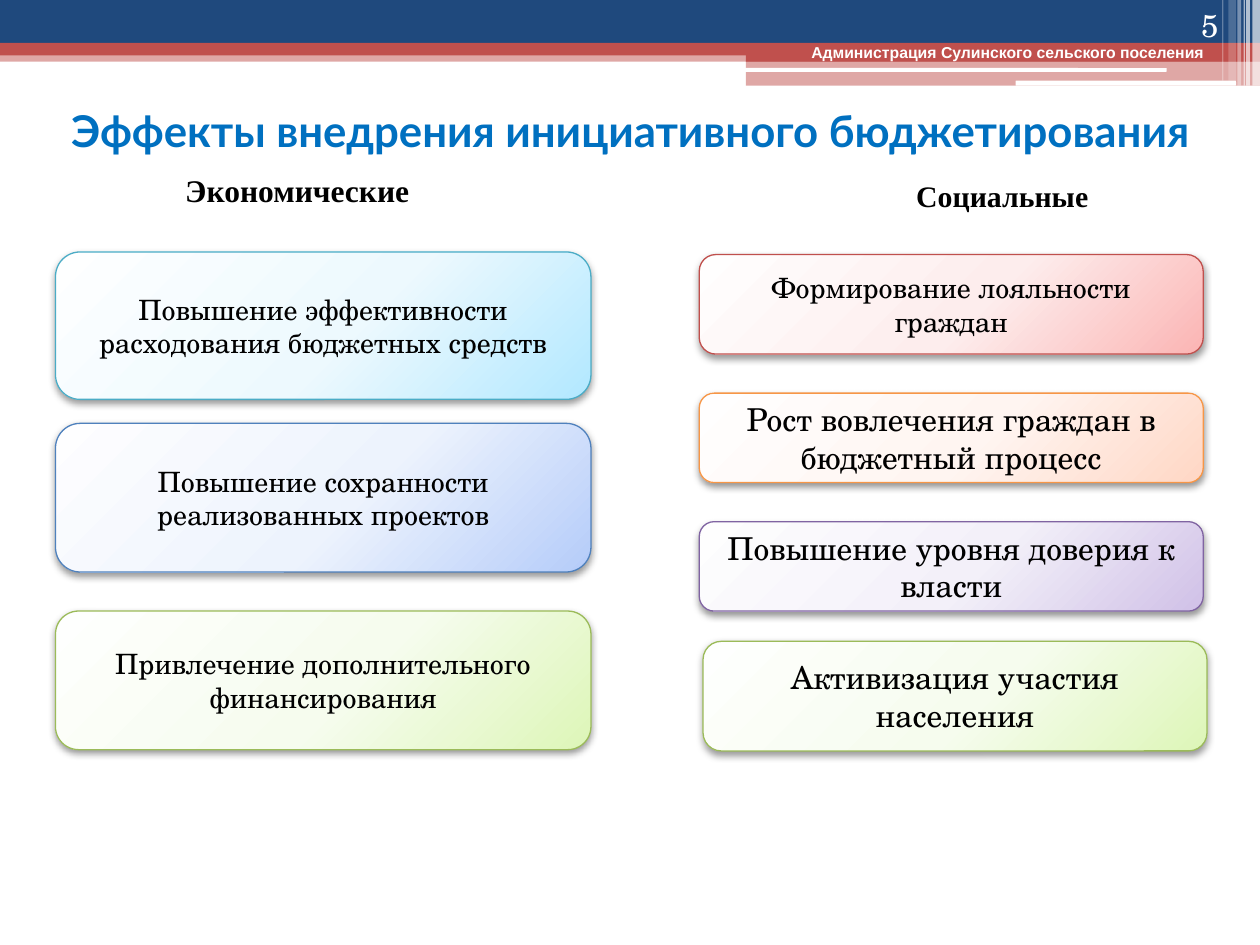
import dataclasses
from typing import Optional

import lxml.etree
import pptx
import pptx.dml.color
import pptx.enum.shapes
import pptx.enum.text
import pptx.oxml
import pptx.oxml.ns
import pptx.util

RGBColor = pptx.dml.color.RGBColor
Shapes = pptx.enum.shapes.MSO_SHAPE
Align = pptx.enum.text.PP_ALIGN
Anchor = pptx.enum.text.MSO_ANCHOR
AutoSize = pptx.enum.text.MSO_AUTO_SIZE
qn = pptx.oxml.ns.qn

NAVY = RGBColor(0x1F, 0x49, 0x7D)
RED = RGBColor(0xC0, 0x50, 0x4D)
WHITE = RGBColor(0xFF, 0xFF, 0xFF)
BLACK = RGBColor(0x00, 0x00, 0x00)
TITLE_BLUE = RGBColor(0x00, 0x70, 0xC0)
SERIF, BODY, SANS, HEADING = "Times New Roman", "TeX Gyre Schola", "Arial", "Lato"

# The slide is a grid of 100 columns by 75 rows
deck = pptx.Presentation()
deck.slide_width, deck.slide_height = pptx.util.Inches(10), pptx.util.Inches(7.5)
COLUMN, ROW = deck.slide_width / 100, deck.slide_height / 75


@dataclasses.dataclass(frozen=True)
class Area:
    column: float
    row: float
    columns: float
    rows: float

    def emu(self) -> tuple:
        return (round(self.column * COLUMN), round(self.row * ROW),
                round(self.columns * COLUMN), round(self.rows * ROW))


@dataclasses.dataclass(frozen=True)
class Band:
    area: Area
    color: RGBColor
    opacity: int = 100
    kind: Shapes = Shapes.RECTANGLE


@dataclasses.dataclass(frozen=True)
class Palette:
    line: RGBColor
    stops: tuple


@dataclasses.dataclass(frozen=True)
class Label:
    text: str
    area: Area
    font: str
    size: float
    color: RGBColor
    bold: bool = True
    align: Optional[Align] = None
    anchor: Anchor = Anchor.TOP
    grows: bool = True


@dataclasses.dataclass(frozen=True)
class Card:
    text: str
    area: Area
    palette: Palette
    size: float


def palette(line: str, *stops: str) -> Palette:
    return Palette(RGBColor.from_string(line), stops)


def write(shape, text: str, font: str, size: float, color: RGBColor,
          bold: bool, align: Optional[Align], anchor: Anchor) -> None:
    frame = shape.text_frame
    frame.word_wrap = True
    frame.vertical_anchor = anchor
    para = frame.paragraphs[0]
    para.alignment = align
    span = para.add_run()
    span.text = text
    span.font.name, span.font.size, span.font.bold = font, pptx.util.Pt(size), bold
    span.font.color.rgb = color


def draw_band(page, band: Band) -> None:
    shape = page.shapes.add_shape(band.kind, *band.area.emu())
    shape.shadow.inherit = False
    shape.line.fill.background()
    shape.fill.solid()
    shape.fill.fore_color.rgb = band.color
    if band.opacity < 100:
        color = shape.fill._xPr.find(".//" + qn("a:srgbClr"))
        lxml.etree.SubElement(color, qn("a:alpha"), val=str(band.opacity * 1000))


def draw_label(page, label: Label) -> None:
    box = page.shapes.add_textbox(*label.area.emu())
    write(box, label.text, label.font, label.size, label.color,
          label.bold, label.align, label.anchor)
    box.text_frame.auto_size = AutoSize.SHAPE_TO_FIT_TEXT if label.grows else AutoSize.NONE


def draw_card(page, card: Card) -> None:
    shape = page.shapes.add_shape(Shapes.FLOWCHART_ALTERNATE_PROCESS, *card.area.emu())
    shape.line.color.rgb = card.palette.line
    shape.line.width = pptx.util.Pt(0.75)
    # Radial gradient spreading from beyond the card
    shape.fill.background()
    properties = shape._element.spPr
    stops = "".join(f'<a:gs pos="{place * 1000}"><a:srgbClr val="{color}"/></a:gs>'
                    for place, color in zip((0, 55, 100), card.palette.stops))
    gradient = pptx.oxml.parse_xml(
        f'<a:gradFill {pptx.oxml.ns.nsdecls("a")} rotWithShape="1"><a:gsLst>{stops}</a:gsLst>'
        '<a:path path="circle"><a:fillToRect l="-40000" t="-90000" r="140000" b="190000"/>'
        '</a:path></a:gradFill>')
    properties.replace(properties.find(qn("a:noFill")), gradient)
    # Soft shadow below
    shape.shadow.inherit = False
    properties.find(qn("a:effectLst")).append(pptx.oxml.parse_xml(
        f'<a:outerShdw {pptx.oxml.ns.nsdecls("a")} blurRad="{pptx.util.Pt(4.1)}" '
        f'dist="{pptx.util.Pt(2)}" dir="5400000" rotWithShape="0">'
        '<a:srgbClr val="000000"><a:alpha val="40000"/></a:srgbClr></a:outerShdw>'))
    write(shape, card.text, BODY, card.size, BLACK, False, Align.CENTER, Anchor.MIDDLE)


# Header bands, then the light stripes at the right edge
BANDS = [
    Band(Area(0, 4, 100, 0.9), RED, 50),
    Band(Area(0, 0, 100, 3.4), NAVY),
    Band(Area(0, 3.4, 100, 1), RED),
    Band(Area(59.2, 3.9, 40.8, 1), RED),
    Band(Area(59.2, 4.8, 40.8, 2), RED, 50),
    Band(Area(59.1, 5.4, 33.5, 0.3), WHITE, kind=Shapes.ROUNDED_RECTANGLE),
    Band(Area(80.6, 6.4, 17.5, 0.4), WHITE, kind=Shapes.ROUNDED_RECTANGLE),
] + [Band(Area(column, 0, columns, rows), WHITE, opacity)
     for column, columns, rows, opacity in (
         (99.4, 0.6, 6.8, 65), (98.9, 0.3, 6.8, 65), (98.7, 0.1, 6.8, 60),
         (98.2, 0.3, 6.8, 40), (97.5, 0.6, 6.4, 20), (97, 0.1, 6.4, 30))]

LABELS = [
    Label("Администрация Сулинского сельского поселения",
          Area(63.4, 2.9, 33.9, 2.5), SANS, 9, WHITE),
    Label("Экономические", Area(10.6, 13.1, 26, 4), SERIF, 18, BLACK, align=Align.CENTER),
    Label("Социальные", Area(65, 13.6, 29.1, 3.9), SERIF, 17, BLACK, align=Align.CENTER),
    Label("5", Area(89.4, 0, 8.3, 4), BODY, 18, WHITE, bold=False,
          align=Align.RIGHT, anchor=Anchor.BOTTOM, grows=False),
]

AQUA = palette("4BACC6", "FEFFFF", "EDF9FE", "B2E8FF")
BLUE = palette("4F81BD", "FEFEFF", "EDF3FD", "B5CCF9")
GREEN = palette("9BBB59", "FEFFFE", "F6FCEE", "DDF6B8")
ROSE = palette("C0504D", "FFFEFE", "FDEDED", "FBB5B4")
ORANGE = palette("F79646", "FFFEFE", "FFF5F1", "FFD7C5")
VIOLET = palette("8064A2", "FEFEFE", "F3F0F9", "D0C1E7")

ECONOMIC, SOCIAL = (4.4, 42.5), (55.5, 40)  # first column, columns wide


def card(text: str, side: tuple, row: float, rows: float, colors: Palette,
         size: float, shift: float = 0) -> Card:
    return Card(text, Area(side[0] + shift, row, side[1], rows), colors, size)


CARDS = [
    card("Повышение эффективности расходования бюджетных средств", ECONOMIC, 20, 11.7, AQUA, 16),
    card("Повышение сохранности реализованных проектов", ECONOMIC, 33.6, 11.8, BLUE, 16),
    card("Привлечение дополнительного финансирования", ECONOMIC, 48.5, 11, GREEN, 16),
    card("Формирование лояльности граждан", SOCIAL, 20.2, 7.9, ROSE, 16),
    card("Рост вовлечения граждан в бюджетный процесс", SOCIAL, 31.2, 7.1, ORANGE, 18),
    card("Повышение уровня доверия к власти", SOCIAL, 41.4, 7.1, VIOLET, 18),
    card("Активизация участия населения", SOCIAL, 50.9, 8.7, GREEN, 18, shift=0.3),
]

page = deck.slides.add_slide(deck.slide_layouts.get_by_name("Title Only"))

# Title
title = page.shapes.title
title.left, title.top, title.width, title.height = Area(0, 7.6, 100, 5.5).emu()
write(title, "Эффекты внедрения инициативного бюджетирования",
      HEADING, 25, TITLE_BLUE, True, Align.CENTER, Anchor.MIDDLE)
title.text_frame.auto_size = AutoSize.NONE

# Header, labels and cards
for band in BANDS:
    draw_band(page, band)
for label in LABELS:
    draw_label(page, label)
for effect in CARDS:
    draw_card(page, effect)

deck.save("out.pptx")
